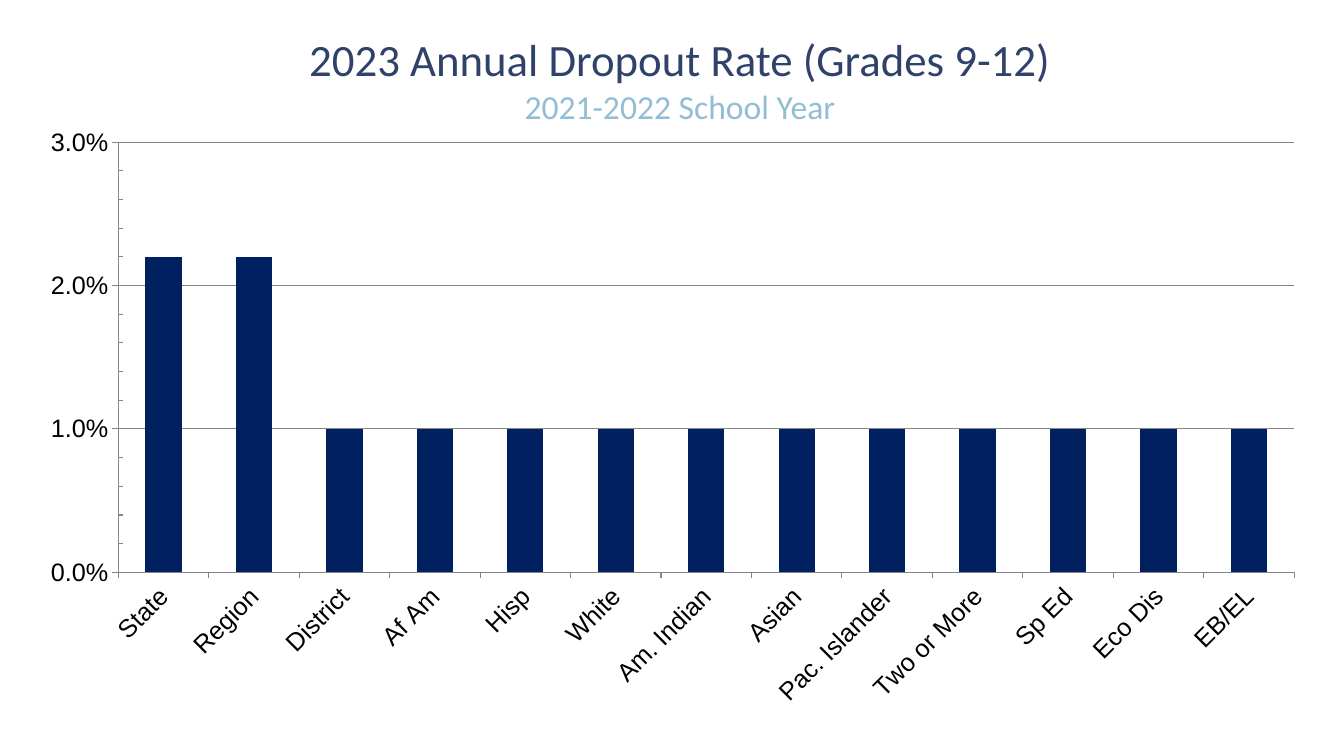
"""Build the annual dropout rate slide with its column chart."""
from lxml.etree import SubElement
from pptx import Presentation
from pptx.chart.data import CategoryChartData
from pptx.dml.color import RGBColor
from pptx.enum.chart import XL_CHART_TYPE, XL_TICK_MARK
from pptx.enum.text import PP_ALIGN
from pptx.oxml.ns import qn
from pptx.util import Inches, Pt

HUES = {"title": "304269", "year": "91BED4", "bar": "002060",
        "line": "868686", "text": "000000"}
GROUPS = ["State", "Region", "District", "Af Am", "Hisp", "White",
          "Am. Indian", "Asian", "Pac. Islander", "Two or More",
          "Sp Ed", "Eco Dis", "EB/EL"]
RATES = [0.022] * 2 + [0.01] * (len(GROUPS) - 2)


def style(font, face, size, hue):
    font.name, font.size = face, Pt(size)
    font.color.rgb = RGBColor.from_string(HUES[hue])


deck = Presentation()
deck.slide_width, deck.slide_height = Inches(13.33), Inches(7.5)
slide = deck.slides.add_slide(deck.slide_layouts[6])

data = CategoryChartData(number_format="0.0%")
data.categories = GROUPS
data.add_series("Series 1", RATES)
chart = slide.shapes.add_chart(
    XL_CHART_TYPE.COLUMN_CLUSTERED, Inches(0.25), Inches(1.16),
    Inches(12.83), Inches(5.97), data).chart
chart.has_legend = chart.has_title = False
style(chart.font, "Arial", 18, "text")

plot = chart.plots[0]
plot.gap_width = 150
plot.vary_by_categories = False
fill = plot.series[0].format.fill
fill.solid()
fill.fore_color.rgb = RGBColor.from_string(HUES["bar"])

rate, group = chart.value_axis, chart.category_axis
rate.minimum_scale, rate.maximum_scale = 0, 0.03
rate.major_unit, rate.minor_unit = 0.01, 0.002
rate.minor_tick_mark = XL_TICK_MARK.INSIDE
rate.has_major_gridlines = True
rate.tick_labels.number_format = "0.0%"
rate.tick_labels.number_format_is_linked = False
for axis in (rate, group):
    axis.major_tick_mark = XL_TICK_MARK.OUTSIDE
    style(axis.tick_labels.font, "Arial", 18, "text")
for part in (rate, group, rate.major_gridlines):
    part.format.line.width = Pt(0.75)
    part.format.line.color.rgb = RGBColor.from_string(HUES["line"])
body = group._element.find(qn("c:txPr")).find(qn("a:bodyPr"))
body.set("rot", "-2700000")
body.set("vert", "horz")

area = chart._chartSpace.chart.plotArea
for old in area.findall(qn("c:layout")):
    area.remove(old)
layout = SubElement(area, qn("c:layout"))
area.insert(0, layout)
manual = SubElement(layout, qn("c:manualLayout"))
for tag, val in [("layoutTarget", "inner"), ("xMode", "edge"),
                 ("yMode", "edge"), ("x", "0.072"), ("y", "0.042"),
                 ("w", "0.909"), ("h", "0.715")]:
    SubElement(manual, qn("c:" + tag)).set("val", val)

box = slide.shapes.add_textbox(
    Inches(2.08), Inches(0.27), Inches(9.33), Inches(1.06))
frame = box.text_frame
frame.word_wrap = True
head = frame.paragraphs[0]
head.text = "2023 Annual Dropout Rate (Grades 9-12)\v2021-2022 School Year"
head.alignment = PP_ALIGN.CENTER
for run, size, hue in zip(head.runs, (32, 24), ("title", "year")):
    style(run.font, "Calibri", size, hue)

deck.save("out.pptx")
